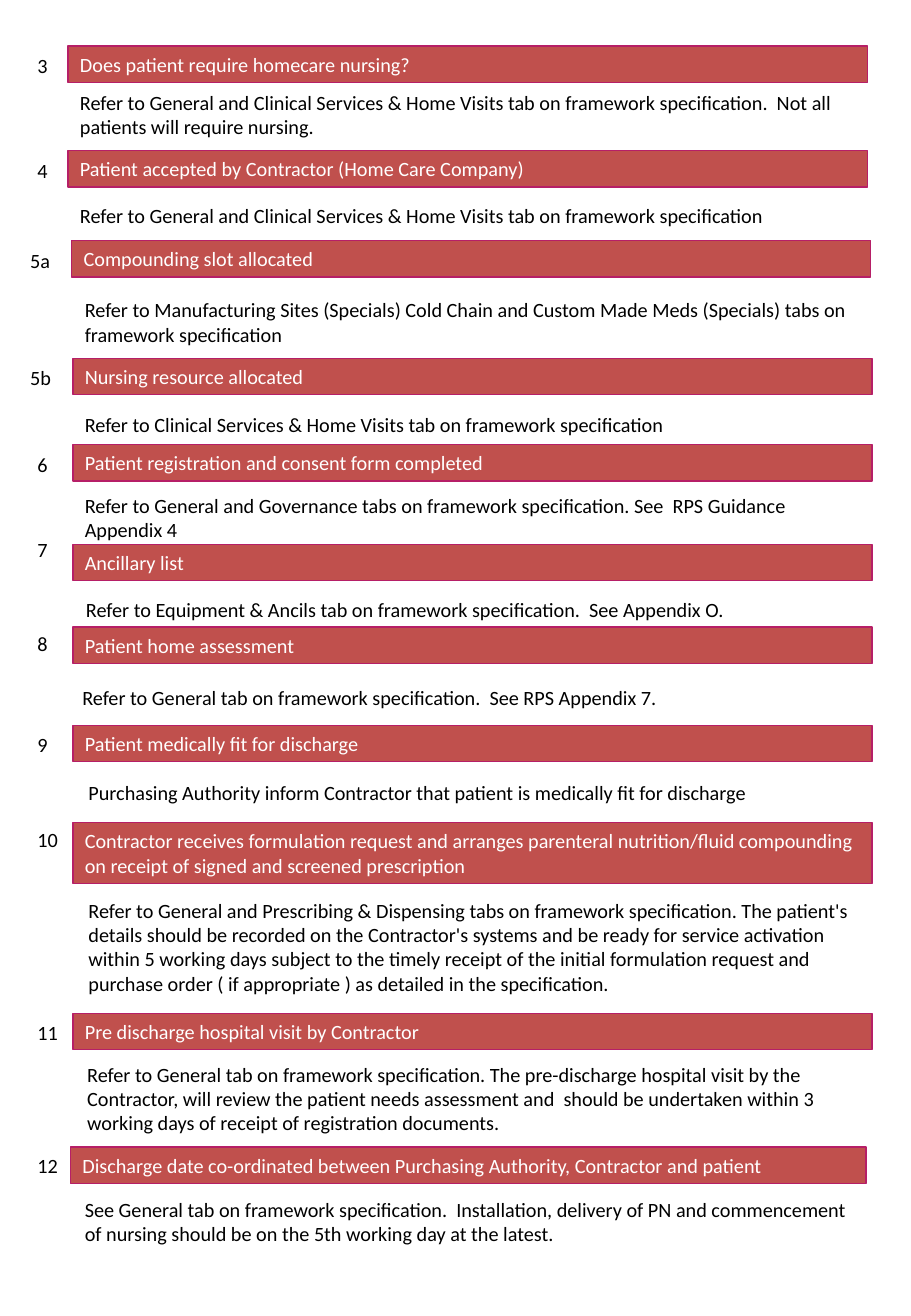
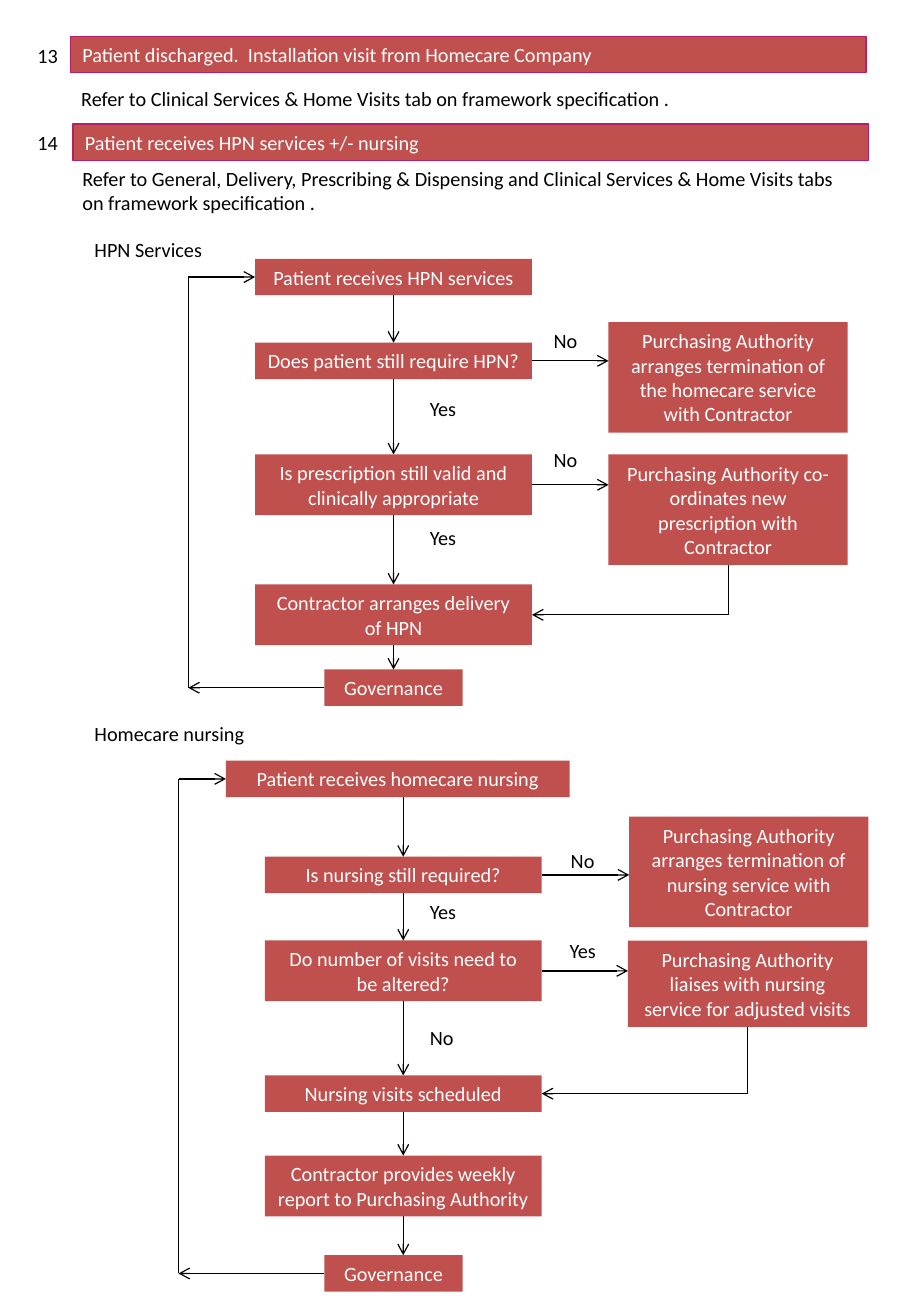
from dataclasses import dataclass

from lxml import etree
from pptx import Presentation
from pptx.dml.color import RGBColor
from pptx.enum.shapes import MSO_CONNECTOR, MSO_SHAPE
from pptx.enum.text import MSO_ANCHOR, MSO_AUTO_SIZE, PP_ALIGN
from pptx.oxml.ns import qn
from pptx.util import Inches, Pt

RECTANGLE = MSO_SHAPE.RECTANGLE
STRAIGHT = MSO_CONNECTOR.STRAIGHT
LEFT, CENTER = PP_ALIGN.LEFT, PP_ALIGN.CENTER
MIDDLE, TOP = MSO_ANCHOR.MIDDLE, MSO_ANCHOR.TOP
GROW = MSO_AUTO_SIZE.SHAPE_TO_FIT_TEXT
SIDE_TOP, SIDE_LEFT, SIDE_BOTTOM, SIDE_RIGHT = range(4)

COLORS = {"box": "C0504D", "edge": "B61F67", "light": "FFFFFF", "dark": "000000"}
FONT = "Calibri"
TEXT_SIZE = Pt(12)
LINE_WIDTH = Pt(0.75)
HEIGHTS = {1: 0.3, 2: 0.5, 3: 0.71, 4: 0.91}  # box height by lines of text
NODE_WIDTH = 2.28
SIDE_WIDTH = 1.97


@dataclass
class Step:
    number: str
    heading: str
    note: str
    left: float
    top: float
    note_shift: tuple  # from the corner of the bar
    note_lines: int = 1
    heading_lines: int = 1
    width: float = 6.58
    number_drop: float = 0.01


FIRST_STEPS = [
    Step("3", "Does patient require homecare nursing?",
         "Refer to General and Clinical Services & Home Visits tab on framework "
         "specification.  Not all patients will require nursing.",
         0.56, 0.38, (0, 0.31), 2),
    Step("4", "Patient accepted by Contractor (Home Care Company)",
         "Refer to General and Clinical Services & Home Visits tab on framework specification",
         0.56, 1.24, (0, 0.38)),
    Step("5a", "Compounding slot allocated",
         "Refer to Manufacturing Sites (Specials) Cold Chain and Custom Made Meds "
         "(Specials) tabs on framework specification",
         0.59, 1.98, (0.01, 0.42), 2),
    Step("5b", "Nursing resource allocated",
         "Refer to Clinical Services & Home Visits tab on framework specification",
         0.6, 2.95, (0, 0.39)),
    Step("6", "Patient registration and consent form completed",
         "Refer to General and Governance tabs on framework specification. "
         "See  RPS Guidance Appendix 4",
         0.6, 3.66, (0, 0.35), 2),
    Step("7", "Ancillary list",
         "Refer to Equipment & Ancils tab on framework specification.  See Appendix O.",
         0.6, 4.48, (0.01, 0.39), number_drop=-0.11),
    Step("8", "Patient home assessment",
         "Refer to General tab on framework specification.  See RPS Appendix 7.",
         0.6, 5.16, (-0.02, 0.43), number_drop=-0.01),
    Step("9", "Patient medically fit for discharge",
         "Purchasing Authority inform Contractor that patient is medically fit for discharge",
         0.6, 5.97, (0.03, 0.4)),
    Step("10", "Contractor receives formulation request and arranges parenteral "
         "nutrition/fluid compounding on receipt of signed and screened prescription",
         "Refer to General and Prescribing & Dispensing tabs on framework specification. "
         "The patient's details should be recorded on the Contractor's systems and be "
         "ready for service activation within 5 working days subject to the timely "
         "receipt of the initial formulation request and purchase order "
         "( if appropriate ) as detailed in the specification.",
         0.6, 6.77, (0.03, 0.57), 4, 2, number_drop=-0.01),
    Step("11", "Pre discharge hospital visit by Contractor",
         "Refer to General tab on framework specification. The pre-discharge hospital "
         "visit by the Contractor, will review the patient needs assessment and  should "
         "be undertaken within 3 working days of receipt of registration documents.",
         0.6, 8.34, (0.02, 0.35), 3),
    Step("12", "Discharge date co-ordinated between Purchasing Authority, "
         "Contractor and patient",
         "See General tab on framework specification.  Installation, delivery of PN and "
         "commencement of nursing should be on the 5th working day at the latest.",
         0.58, 9.44, (0.02, 0.36), 2, width=6.55, number_drop=0),
]
LAST_STEPS = [
    Step("13", "Patient discharged.  Installation visit from Homecare Company",
         "Refer to Clinical Services & Home Visits tab on framework specification .",
         0.58, 0.3, (-0.01, 0.36), width=6.55),
    Step("14", "Patient receives HPN services +/- nursing",
         "Refer to General, Delivery, Prescribing & Dispensing and Clinical Services & "
         "Home Visits tabs on framework specification .",
         0.6, 1.02, (-0.02, 0.3), 2, width=6.55, number_drop=0),
]

# Flow charts: places are measured from the corner of the chart.
# nodes: text, left, top, width, lines
# sides: text, left, top, lines, node it leaves, node it returns to
# labels: text, left, top
HPN_FLOW = {
    "title": "HPN Services",
    "loop": 0.87,
    "nodes": [
        ("Patient receives HPN services", 1.42, 0.23, NODE_WIDTH, 1),
        ("Does patient still require HPN?", 1.42, 0.92, NODE_WIDTH, 1),
        ("Is prescription still valid and clinically appropriate", 1.42, 1.84, NODE_WIDTH, 2),
        ("Contractor arranges delivery of HPN", 1.42, 2.91, NODE_WIDTH, 2),
        ("Governance", 1.99, 3.61, 1.14, 1),
    ],
    "sides": [
        ("Purchasing Authority arranges termination of the homecare service with Contractor",
         4.33, 0.75, 4, 1, None),
        ("Purchasing Authority co-ordinates new prescription with Contractor",
         4.33, 1.84, 4, 2, 3),
    ],
    "labels": [("No", 3.78, 0.75), ("Yes", 2.76, 1.31), ("No", 3.78, 1.73),
               ("Yes", 2.76, 2.37)],
}
NURSING_FLOW = {
    "title": "Homecare nursing",
    "loop": 0.79,
    "nodes": [
        ("Patient receives homecare nursing", 1.18, 0.37, 2.83, 1),
        ("Is nursing still required?", 1.5, 1.16, NODE_WIDTH, 1),
        ("Do number of visits need to be altered?", 1.5, 1.85, NODE_WIDTH, 2),
        ("Nursing visits scheduled", 1.5, 2.96, NODE_WIDTH, 1),
        ("Contractor provides weekly report to Purchasing Authority",
         1.5, 3.62, NODE_WIDTH, 2),
        ("Governance", 1.99, 4.44, 1.14, 1),
    ],
    "sides": [
        ("Purchasing Authority arranges termination of nursing service with Contractor",
         4.5, 0.83, 4, 1, None),
        ("Purchasing Authority liaises with nursing service for adjusted visits",
         4.49, 1.85, 3, 2, 3),
    ],
    "labels": [("No", 3.92, 1.04), ("Yes", 2.76, 1.46), ("Yes", 3.91, 1.78),
               ("No", 2.76, 2.5)],
}


def color(name):
    return RGBColor.from_string(COLORS[name])


def write(shape, text, ink, align, anchor, wrap=True):
    frame = shape.text_frame
    frame.word_wrap = wrap
    frame.auto_size = GROW
    frame.vertical_anchor = anchor
    para = frame.paragraphs[0]
    para.text = text
    para.alignment = align
    para.font.name = FONT
    para.font.size = TEXT_SIZE
    para.font.color.rgb = color(ink)


def add_text(page, text, left, top, width, lines=1, wrap=True):
    box = page.shapes.add_textbox(Inches(left), Inches(top), Inches(width),
                                  Inches(HEIGHTS[lines]))
    write(box, text, "dark", LEFT, TOP, wrap)


def add_box(page, text, left, top, width, lines, align=CENTER, edge=None):
    box = page.shapes.add_shape(RECTANGLE, Inches(left), Inches(top), Inches(width),
                                Inches(HEIGHTS[lines]))
    box.shadow.inherit = False
    box.fill.solid()
    box.fill.fore_color.rgb = color("box")
    if edge:
        box.line.color.rgb = color(edge)
        box.line.width = LINE_WIDTH
    else:
        box.line.fill.background()
    write(box, text, "light", align, MIDDLE)
    return box


def side_middle(box, side):
    center, middle = box.left + box.width // 2, box.top + box.height // 2
    return {
        SIDE_TOP: (center, box.top),
        SIDE_LEFT: (box.left, middle),
        SIDE_BOTTOM: (center, box.top + box.height),
        SIDE_RIGHT: (box.left + box.width, middle),
    }[side]


def add_line(page, start, end, begin=None, finish=None, arrow=True):
    """Draw a line; begin and finish are (box, side) pairs to join."""
    line = page.shapes.add_connector(STRAIGHT, *start, *end)
    if begin:
        line.begin_connect(*begin)
    if finish:
        line.end_connect(*finish)
    line.line.color.rgb = color("dark")
    line.line.width = LINE_WIDTH
    if arrow:
        outline = line.line._get_or_add_ln()
        etree.SubElement(outline, qn("a:tailEnd"), type="arrow")
    etree.SubElement(line._element.spPr, qn("a:effectLst"))


def add_step(page, step):
    add_box(page, step.heading, step.left, step.top, step.width, step.heading_lines,
            LEFT, "edge")
    number_left = 0.21 if step.number.isdigit() else 0.15
    add_text(page, step.number, number_left, step.top + step.number_drop, 0.47)
    shift_x, shift_y = step.note_shift
    add_text(page, step.note, step.left + shift_x, step.top + shift_y, 6.5,
             step.note_lines)


def add_spine(page, nodes):
    """Arrows down the column, on the centre line of its regular nodes."""
    axis = side_middle(nodes[1], SIDE_TOP)[0]
    for upper, lower in zip(nodes, nodes[1:]):
        start, end = side_middle(upper, SIDE_BOTTOM), side_middle(lower, SIDE_TOP)
        add_line(page, (axis, start[1]), (axis, end[1]),
                 (upper, SIDE_BOTTOM) if start[0] == axis else None,
                 (lower, SIDE_TOP) if end[0] == axis else None)


def add_flow(page, left, top, flow):
    add_text(page, flow["title"], left, top, 1.73)
    nodes = [add_box(page, text, left + x, top + y, width, lines)
             for text, x, y, width, lines in flow["nodes"]]
    add_spine(page, nodes)

    # Side branches
    for text, x, y, lines, source, target in flow["sides"]:
        side = add_box(page, text, left + x, top + y, SIDE_WIDTH, lines)
        start = side_middle(nodes[source], SIDE_RIGHT)
        add_line(page, start, (side.left, start[1]), (nodes[source], SIDE_RIGHT))
        if target is not None:
            bottom = side_middle(side, SIDE_BOTTOM)
            end = side_middle(nodes[target], SIDE_RIGHT)
            corner = (bottom[0], end[1])
            add_line(page, bottom, corner, (side, SIDE_BOTTOM), arrow=False)
            add_line(page, corner, end, finish=(nodes[target], SIDE_RIGHT))

    # Loop from the last node back to the first
    loop = Inches(left + flow["loop"])
    first, last = side_middle(nodes[0], SIDE_LEFT), side_middle(nodes[-1], SIDE_LEFT)
    add_line(page, last, (loop, last[1]), (nodes[-1], SIDE_LEFT))
    add_line(page, (loop, last[1]), (loop, first[1]), arrow=False)
    add_line(page, (loop, first[1]), first, finish=(nodes[0], SIDE_LEFT))

    for text, x, y in flow["labels"]:
        add_text(page, text, left + x, top + y, 0.42, wrap=False)


def add_page(deck, steps):
    page = deck.slides.add_slide(deck.slide_layouts[6])
    for step in steps:
        add_step(page, step)
    return page


def main():
    deck = Presentation()
    deck.slide_width, deck.slide_height = Inches(7.5), Inches(10.83)
    add_page(deck, FIRST_STEPS)
    page = add_page(deck, LAST_STEPS)
    add_flow(page, 0.68, 1.9, HPN_FLOW)
    add_flow(page, 0.68, 5.89, NURSING_FLOW)
    deck.save("out.pptx")


if __name__ == "__main__":
    main()
